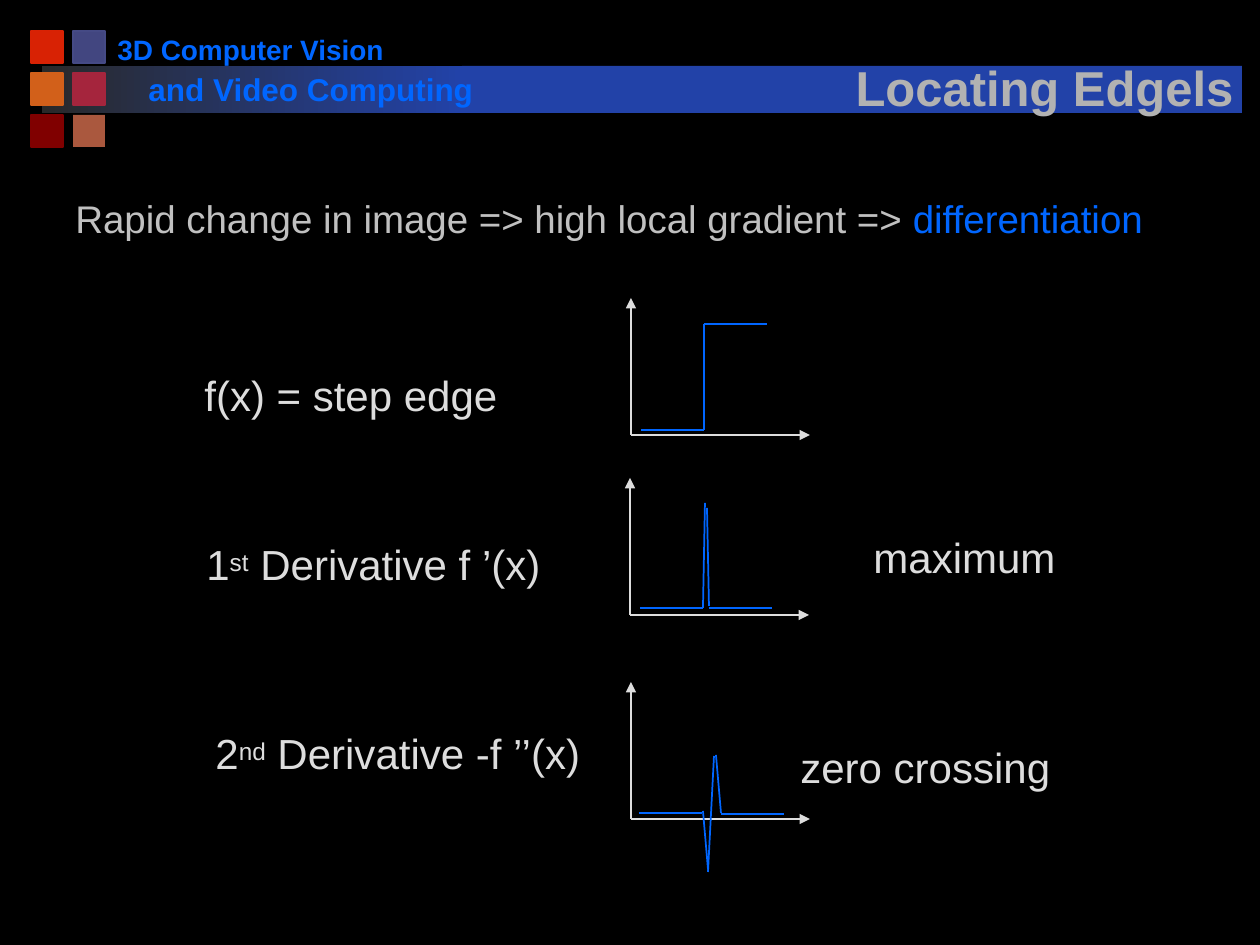
import pptx
import pptx.dml.color
import pptx.enum.shapes
import pptx.enum.text
import pptx.oxml
import pptx.oxml.ns
import pptx.util

SCALE = 914400 / 126
NS = pptx.oxml.ns.nsdecls("a")
BLUE, PALE = "0066FF", "DDDDDD"


def px(n):
    return pptx.util.Emu(round(n * SCALE))


def tint(code):
    return pptx.dml.color.RGBColor.from_string(code)


def write(para, text, size=24, color=PALE, bold=False, base=0, shade=False):
    run = para.add_run()
    run.text = text
    font = run.font
    font.name, font.size, font.bold = "Arial", pptx.util.Pt(size), bold
    font.color.rgb = tint(color)
    props = run._r.get_or_add_rPr()
    if base:
        props.set("baseline", str(base * 1000))
    if shade:
        glow = pptx.oxml.parse_xml(
            f'<a:effectLst {NS}><a:outerShdw dist="35921" dir="2700000">'
            '<a:srgbClr val="000000"/></a:outerShdw></a:effectLst>')
        props.find(pptx.oxml.ns.qn("a:solidFill")).addnext(glow)


class Deck:
    """Holds the style and the current slide, and draws each kind of element."""

    def __init__(self):
        self.show = pptx.Presentation()
        self.show.slide_width, self.show.slide_height = px(1260), px(945)
        self.slide = self.show.slides.add_slide(self.show.slide_layouts[6])
        back = self.slide.background.fill
        back.solid()
        back.fore_color.rgb = tint("000000")

    def block(self, x, y, w, h, fill, edge=None, fade=None):
        kind = pptx.enum.shapes.MSO_SHAPE.RECTANGLE
        shape = self.slide.shapes.add_shape(kind, px(x), px(y), px(w), px(h))
        shape.shadow.inherit = False
        if fade:
            shape.fill.gradient()
            shape.fill.gradient_angle = 0
            for stop, code in zip(shape.fill.gradient_stops, (fill, fade)):
                stop.color.rgb = tint(code)
        else:
            shape.fill.solid()
            shape.fill.fore_color.rgb = tint(fill)
        if edge:
            shape.line.color.rgb = tint(edge)
            shape.line.width = pptx.util.Pt(1)
        else:
            shape.line.fill.background()

    def text(self, x, y, w, h, *parts, wrap=False, align="LEFT", anchor="TOP", above=0, **style):
        frame = self.slide.shapes.add_textbox(px(x), px(y), px(w), px(h)).text_frame
        frame.word_wrap = wrap
        frame.vertical_anchor = pptx.enum.text.MSO_ANCHOR[anchor]
        para = frame.paragraphs[0]
        para.alignment = pptx.enum.text.PP_ALIGN[align]
        para.space_before = pptx.util.Pt(above)
        for part, extra in parts:
            write(para, part, **{**style, **extra})

    def line(self, x1, y1, x2, y2, color=BLUE, arrow=False):
        kind = pptx.enum.shapes.MSO_CONNECTOR.STRAIGHT
        line = self.slide.shapes.add_connector(kind, px(x1), px(y1), px(x2), px(y2))
        line.line.color.rgb = tint(color)
        line.line.width = pptx.util.Pt(1)
        if arrow:
            line.line._get_or_add_ln().append(
                pptx.oxml.parse_xml(f'<a:tailEnd {NS} type="triangle"/>'))
        line._element.spPr.append(pptx.oxml.parse_xml(f"<a:effectLst {NS}/>"))

    def graph(self, x, y, *parts):
        self.line(x, y, x, y - 137, PALE, True)
        self.line(x, y, x + 179, y, PALE, True)
        for part in parts:
            self.line(*part)


def main():
    deck = Deck()
    deck.block(42, 66, 420, 47, "292929", fade="2242A8")
    tiles = [("D82204", "D82204"), ("424680", "454A85"),
             ("D2601A", "D2601A"), ("A5253D", "A5253D"),
             ("800000", "800000"), ("AA583E", None)]
    for i, (fill, edge) in enumerate(tiles):
        deck.block(31 + i % 2 * 42, 31 + i // 2 * 42, 32, 32, fill, edge)
    deck.block(462, 66, 780, 47, "2242A8")

    deck.text(105, 26, 292, 47, ("3D Computer Vision", {}), size=16, color=BLUE, bold=True)
    deck.text(136, 64, 357, 50, ("and Video Computing", {}),
              wrap=True, size=18, color=BLUE, bold=True)
    deck.text(839, 39, 411, 84, ("Locating Edgels", {}), wrap=True, align="CENTER",
              anchor="BOTTOM", size=28, color="B2B2B2", bold=True, shade=True)
    deck.text(63, 189, 1144, 63, ("Rapid change in image => high local gradient => ", {}),
              ("differentiation", {"color": BLUE}), wrap=True, above=3, size=22, color="C0C0C0")

    deck.graph(631, 435, (641, 430, 704, 430), (704, 324, 767, 324), (704, 324, 704, 430))
    deck.graph(630, 615, (640, 608, 703, 608), (709, 608, 772, 608),
               (705, 503, 703, 608), (707, 508, 709, 606))
    deck.graph(631, 819, (639, 813, 702, 813), (721, 814, 784, 814),
               (714, 756, 708, 872), (703, 811, 708, 869), (716, 755, 721, 813))

    high = {"base": 20}
    deck.text(192, 363, 319, 63, ("f(x) = step edge", {}))
    deck.text(194, 532, 363, 63, ("1", {}), ("st", high), (" Derivative f ’(x)", {}))
    deck.text(203, 721, 396, 63, ("2", {}), ("nd", high), (" Derivative -f ’’(x)", {}))
    deck.text(861, 525, 208, 63, ("maximum", {}))
    deck.text(788, 735, 276, 63, ("zero crossing", {}))
    deck.show.save("out.pptx")


if __name__ == "__main__":
    main()
